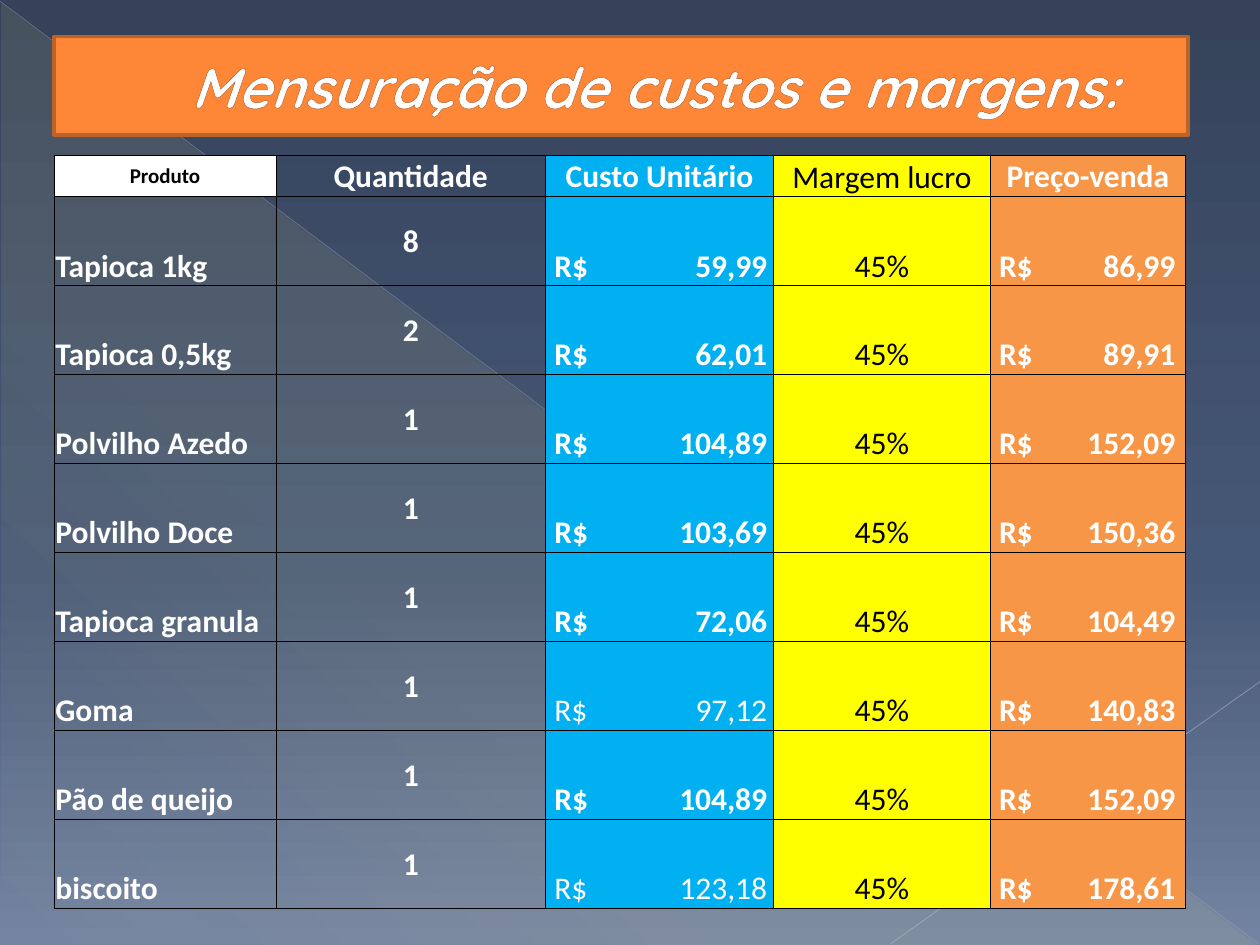
from pptx import Presentation
from pptx.dml.color import RGBColor
from pptx.enum.shapes import MSO_CONNECTOR, MSO_SHAPE
from pptx.enum.text import MSO_ANCHOR, PP_ALIGN
from pptx.oxml import parse_xml
from pptx.oxml.ns import nsdecls, qn
from pptx.util import Inches, Pt

WHITE, BLACK, BLUE, YELLOW, ORANGE = "FFFFFF", "000000", "00B0F0", "FFFF00", "F79646"
HEADERS = ["Produto", "Quantidade", "Custo Unitário", "Margem lucro", "Preço-venda"]
PRODUCTS = [
    ("Tapioca 1kg", "8", "59,99", "86,99"),
    ("Tapioca 0,5kg", "2", "62,01", "89,91"),
    ("Polvilho Azedo", "1", "104,89", "152,09"),
    ("Polvilho Doce", "1", "103,69", "150,36"),
    ("Tapioca granula", "1", "72,06", "104,49"),
    ("Goma", "1", "97,12", "140,83"),
    ("Pão de queijo", "1", "104,89", "152,09"),
    ("biscoito", "1", "123,18", "178,61"),
]
LIGHT_COSTS = {"Goma", "biscoito"}
COL_WIDTHS = [1.76, 2.14, 1.81, 1.72, 1.55]
COL_FILLS = [None, None, BLUE, YELLOW, ORANGE]
PRICE_TABS = {2: 1.69, 4: 1.4}


def rgb(color):
    return RGBColor.from_string(color)


def format_run(r, color, **values):
    for name, value in values.items():
        setattr(r.font, name, value)
    r.font.color.rgb = rgb(color)


def outline(tag, color, width):
    return parse_xml(
        f'<a:{tag} {nsdecls("a")} w="{Pt(width)}"><a:solidFill>'
        f'<a:srgbClr val="{color}"/></a:solidFill></a:{tag}>'
    )


def set_gradient(fill, parent, stops, angle):
    fill.solid()
    gs = "".join(
        f'<a:gs pos="{pos * 1000}"><a:srgbClr val="{color}">'
        f'<a:alpha val="{alpha * 1000}"/></a:srgbClr></a:gs>'
        for pos, color, alpha in stops
    )
    gradient = parse_xml(
        f'<a:gradFill {nsdecls("a")} rotWithShape="1"><a:gsLst>{gs}</a:gsLst>'
        f'<a:lin ang="{angle * 60000}" scaled="0"/></a:gradFill>'
    )
    parent.replace(parent.find(qn("a:solidFill")), gradient)


def add_line(s, start, end, color, width, alpha):
    line = s.shapes.add_connector(MSO_CONNECTOR.STRAIGHT, *map(Inches, start + end))
    line.line.color.rgb = rgb(color)
    line.line.width = Pt(width)
    clr = line.line._ln.find(".//" + qn("a:srgbClr"))
    clr.append(parse_xml(f'<a:alpha {nsdecls("a")} val="{alpha * 1000}"/>'))
    line._element.spPr.append(parse_xml(f'<a:effectLst {nsdecls("a")}/>'))


def add_backdrop(s, left, top, width, height):
    fill = s.background.fill
    fill.solid()
    bg = s.element.find(".//" + qn("p:bgPr"))
    set_gradient(fill, bg, [(0, "35425A", 100), (60, "465877", 100), (100, "7383A2", 100)], 90)
    sp = s.shapes.add_shape(MSO_SHAPE.RIGHT_TRIANGLE, *map(Inches, (left, top, width, height)))
    sp.shadow.inherit = False
    sp.line.fill.background()
    set_gradient(sp.fill, sp._element.spPr,
                 [(0, "FFF39D", 10), (70, "FFF39D", 8), (100, "FFF39D", 1)], 133)
    add_line(s, (0, 0.01), (9.99, 7.49), "BABDC4", 0.39, 35)
    add_line(s, (10, 5.41), (7.07, 7.49), "C1C4CA", 0.47, 45)


def add_title(s, left, top, width, height):
    sp = s.shapes.add_shape(MSO_SHAPE.RECTANGLE, *map(Inches, (left, top, width, height)))
    sp.shadow.inherit = False
    sp.fill.solid()
    sp.fill.fore_color.rgb = rgb("FE8637")
    sp.line.color.rgb = rgb("BC6329")
    sp.line.width = Pt(2)
    tf = sp.text_frame
    tf.word_wrap = True
    tf.vertical_anchor = MSO_ANCHOR.MIDDLE
    p = tf.paragraphs[0]
    p.alignment = PP_ALIGN.CENTER
    p._p.get_or_add_pPr().set("marL", str(Inches(0.53)))
    r = p.add_run()
    r.text = "Mensuração de custos e margens:"
    format_run(r, WHITE, name="Quicksand", size=Pt(32.4), bold=True, italic=True)
    r.font._element.insert(0, outline("ln", "B05D26", 0.5))


def fill_cell(cell, text, fill, color, size, bold, align, anchor, tab=None):
    margins = {"margin_left": 0.07 if tab else 0.01, "margin_right": 0.01,
               "margin_top": 0.01, "margin_bottom": 0}
    for name, value in margins.items():
        setattr(cell, name, Inches(value))
    cell.vertical_anchor = anchor
    for tag in ("lnL", "lnR", "lnT", "lnB"):
        cell._tc.get_or_add_tcPr().append(outline(tag, BLACK, 0.5))
    if fill:
        cell.fill.solid()
        cell.fill.fore_color.rgb = rgb(fill)
    else:
        cell.fill.background()
    p = cell.text_frame.paragraphs[0]
    p.alignment = align
    if tab:
        p._p.get_or_add_pPr().append(parse_xml(
            f'<a:tabLst {nsdecls("a")}><a:tab pos="{Inches(tab)}" algn="r"/></a:tabLst>'))
    r = p.add_run()
    r.text = text
    format_run(r, color, name="Calibri", size=Pt(size), bold=bold)


def add_cost_table(s, left, top, width, height, header_height=0.33):
    frame = s.shapes.add_table(len(PRODUCTS) + 1, len(HEADERS),
                               *map(Inches, (left, top, width, height)))
    table = frame.table
    table.first_row = table.horz_banding = False
    for col, col_width in zip(table.columns, COL_WIDTHS):
        col.width = Inches(col_width)
    row_height = (height - header_height) / len(PRODUCTS)
    for i, row in enumerate(table.rows):
        row.height = Inches(row_height if i else header_height)

    for j, text in enumerate(HEADERS):
        fill_cell(table.cell(0, j), text, COL_FILLS[j] if j else WHITE,
                  BLACK if j in (0, 3) else WHITE, 18 if j else 12, j != 3,
                  PP_ALIGN.CENTER, MSO_ANCHOR.BOTTOM if j == 3 else MSO_ANCHOR.MIDDLE)

    for i, (product, quantity, cost, price) in enumerate(PRODUCTS, 1):
        texts = [product, quantity, f"R$\t{cost}", "45%", f"R$\t{price}"]
        for j, text in enumerate(texts):
            light = j == 3 or (j == 2 and product in LIGHT_COSTS)
            fill_cell(table.cell(i, j), text, COL_FILLS[j], BLACK if j == 3 else WHITE,
                      18, not light, PP_ALIGN.CENTER if j in (1, 3) else PP_ALIGN.LEFT,
                      MSO_ANCHOR.MIDDLE if j == 1 else MSO_ANCHOR.BOTTOM, PRICE_TABS.get(j))


def main():
    prs = Presentation()
    prs.slide_width, prs.slide_height = Inches(10), Inches(7.5)
    s = prs.slides.add_slide(prs.slide_layouts[6])
    add_backdrop(s, 0.01, 0.02, 9.98, 7.48)
    add_title(s, 0.43, 0.29, 9, 0.78)
    add_cost_table(s, 0.43, 1.23, 8.98, 5.98)
    prs.save("out.pptx")


if __name__ == "__main__":
    main()
